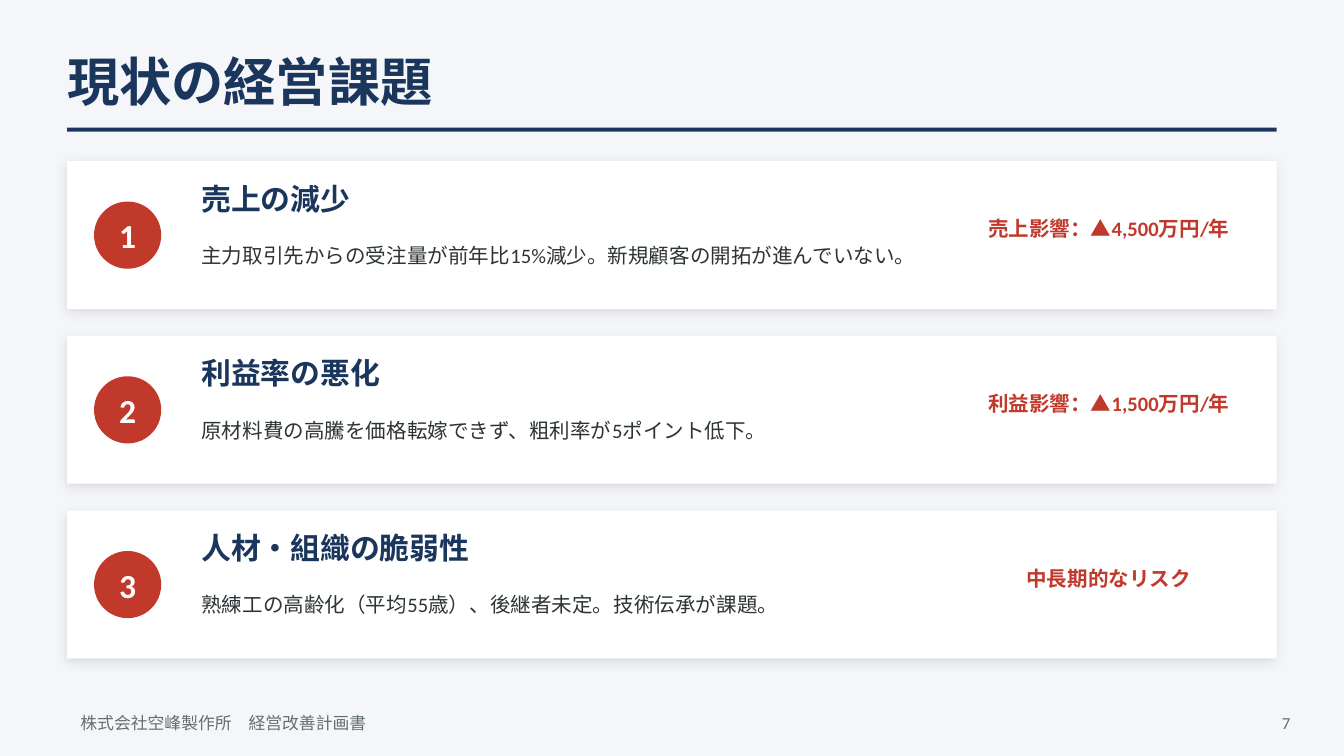
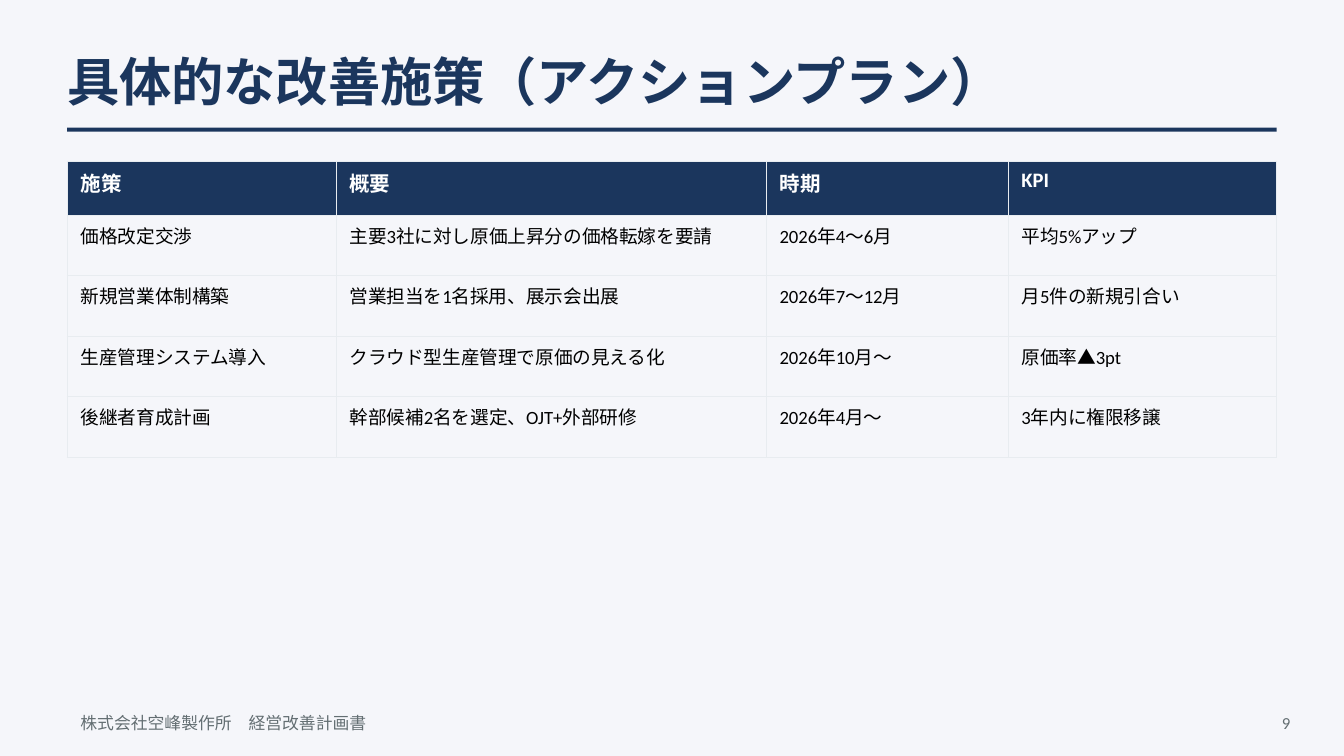
import pptx
import pptx.util
import pptx.dml.color
import pptx.enum.shapes
import pptx.enum.text
import pptx.oxml
import pptx.oxml.ns

COLORS = {
    "background": "F5F6FA",
    "navy": "1B365D",
    "red": "C0392B",
    "white": "FFFFFF",
    "body": "2D3436",
    "footer": "636E72",
    "black": "000000",
    "border": "E8ECF0",
}
FONT = "Calibri"
FOOTER = "株式会社空峰製作所　経営改善計画書"
PAGES = [("現状の経営課題", "7"), ("具体的な改善施策（アクションプラン）", "9")]
ISSUES = [
    ("売上の減少", "主力取引先からの受注量が前年比15%減少。新規顧客の開拓が進んでいない。", "売上影響：▲4,500万円/年"),
    ("利益率の悪化", "原材料費の高騰を価格転嫁できず、粗利率が5ポイント低下。", "利益影響：▲1,500万円/年"),
    ("人材・組織の脆弱性", "熟練工の高齢化（平均55歳）、後継者未定。技術伝承が課題。", "中長期的なリスク"),
]
ACTIONS = [
    ("施策", "概要", "時期", "KPI"),
    ("価格改定交渉", "主要3社に対し原価上昇分の価格転嫁を要請", "2026年4〜6月", "平均5%アップ"),
    ("新規営業体制構築", "営業担当を1名採用、展示会出展", "2026年7〜12月", "月5件の新規引合い"),
    ("生産管理システム導入", "クラウド型生産管理で原価の見える化", "2026年10月〜", "原価率▲3pt"),
    ("後継者育成計画", "幹部候補2名を選定、OJT+外部研修", "2026年4月〜", "3年内に権限移譲"),
]
COLUMN_WIDTHS = [20, 32, 18, 20]
HEADER_HEIGHT, ROW_HEIGHT = 4, 4.5
MARGIN, CONTENT_WIDTH, CONTENT_TOP = 5, 90, 12
CARD_HEIGHT, CARD_STEP = 11, 13

RGB = pptx.dml.color.RGBColor.from_string
SHAPE = pptx.enum.shapes.MSO_SHAPE
ALIGN = pptx.enum.text.PP_ALIGN
MIDDLE = pptx.enum.text.MSO_ANCHOR.MIDDLE
TOP = pptx.enum.text.MSO_ANCHOR.TOP
NAMESPACE = pptx.oxml.ns.nsdecls("a")

presentation = pptx.Presentation()
presentation.slide_width = pptx.util.Inches(10)
presentation.slide_height = pptx.util.Inches(10 * 9 / 16)
column = presentation.slide_width / 100
row = presentation.slide_height / 56.25


def area(left, top, width, height):
    return [round(length) for length in (left * column, top * row, width * column, height * row)]


def write(frame, text, size, color, bold=False, align=ALIGN.LEFT, anchor=MIDDLE):
    frame.word_wrap = True
    frame.vertical_anchor = anchor
    paragraph = frame.paragraphs[0]
    paragraph.alignment = align
    run = paragraph.add_run()
    run.text = text
    run.font.name = FONT
    run.font.size = pptx.util.Pt(size)
    run.font.bold = bold
    run.font.color.rgb = RGB(COLORS[color])


slides = []
for title_text, page_number in PAGES:
    slide = presentation.slides.add_slide(presentation.slide_layouts[5])
    slides.append(slide)
    slide.background.fill.solid()
    slide.background.fill.fore_color.rgb = RGB(COLORS["background"])

    title = slide.shapes.title
    title.left, title.top, title.width, title.height = area(MARGIN, 3, CONTENT_WIDTH, 6)
    frame = title.text_frame
    frame.margin_left = frame.margin_right = frame.margin_top = frame.margin_bottom = 0
    frame.auto_size = pptx.enum.text.MSO_AUTO_SIZE.NONE
    write(frame, title_text, 28, "navy", bold=True)

    rule = slide.shapes.add_shape(SHAPE.RECTANGLE, *area(MARGIN, 9.5, CONTENT_WIDTH, 0.3))
    rule.shadow.inherit = False
    rule.fill.solid()
    rule.fill.fore_color.rgb = RGB(COLORS["navy"])
    rule.line.fill.background()

    footer = slide.shapes.add_textbox(*area(MARGIN, 52, 70, 3.5))
    write(footer.text_frame, FOOTER, 9, "footer")
    number = slide.shapes.add_textbox(*area(90, 52, 7, 3.5))
    write(number.text_frame, page_number, 9, "footer", align=ALIGN.RIGHT)

issue_slide, action_slide = slides

for index, (heading, detail, impact) in enumerate(ISSUES):
    top = CONTENT_TOP + index * CARD_STEP

    card = issue_slide.shapes.add_shape(SHAPE.RECTANGLE, *area(MARGIN, top, CONTENT_WIDTH, CARD_HEIGHT))
    card.fill.solid()
    card.fill.fore_color.rgb = RGB(COLORS["white"])
    card.line.fill.background()
    card.shadow.inherit = False
    effects = card._element.spPr.find(pptx.oxml.ns.qn("a:effectLst"))
    effects.append(pptx.oxml.parse_xml(
        f'<a:outerShdw {NAMESPACE} blurRad="{pptx.util.Pt(6)}" dist="{pptx.util.Pt(2)}" '
        f'dir="{135 * 60000}" algn="bl" rotWithShape="0">'
        f'<a:srgbClr val="{COLORS["black"]}"><a:alpha val="10000"/></a:srgbClr></a:outerShdw>'
    ))

    badge = issue_slide.shapes.add_shape(SHAPE.OVAL, *area(7, top + 3, 5, 5))
    badge.shadow.inherit = False
    badge.fill.solid()
    badge.fill.fore_color.rgb = RGB(COLORS["red"])
    badge.line.fill.background()
    frame = badge.text_frame
    frame.margin_left = frame.margin_right = frame.margin_top = frame.margin_bottom = 0
    write(frame, str(index + 1), 18, "white", bold=True, align=ALIGN.CENTER)

    heading_box = issue_slide.shapes.add_textbox(*area(14, top + 1, 50, 3.5))
    write(heading_box.text_frame, heading, 16, "navy", bold=True)
    detail_box = issue_slide.shapes.add_textbox(*area(14, top + 4.5, 55, 5))
    write(detail_box.text_frame, detail, 11, "body")
    impact_box = issue_slide.shapes.add_textbox(*area(72, top + 3, 21, 4))
    write(impact_box.text_frame, impact, 11, "red", bold=True, align=ALIGN.CENTER)

table_height = HEADER_HEIGHT + ROW_HEIGHT * (len(ACTIONS) - 1)
table = action_slide.shapes.add_table(
    len(ACTIONS), len(COLUMN_WIDTHS), *area(MARGIN, CONTENT_TOP, CONTENT_WIDTH, table_height)
).table
table.horz_banding = False
for table_column, width in zip(table.columns, COLUMN_WIDTHS):
    table_column.width = round(width * column)
for row_index, values in enumerate(ACTIONS):
    is_header = row_index == 0
    table.rows[row_index].height = round((HEADER_HEIGHT if is_header else ROW_HEIGHT) * row)
    for column_index, value in enumerate(values):
        cell = table.cell(row_index, column_index)
        write(cell.text_frame, value, 11 if is_header else 10,
              "white" if is_header else "black", bold=is_header, anchor=TOP)
        properties = cell._tc.get_or_add_tcPr()
        for side in ("lnL", "lnR", "lnT", "lnB"):
            properties.append(pptx.oxml.parse_xml(
                f'<a:{side} {NAMESPACE} w="{pptx.util.Pt(0.5)}"><a:solidFill>'
                f'<a:srgbClr val="{COLORS["border"]}"/></a:solidFill></a:{side}>'
            ))
        if is_header:
            cell.fill.solid()
            cell.fill.fore_color.rgb = RGB(COLORS["navy"])
        else:
            cell.fill.background()

presentation.save("out.pptx")
